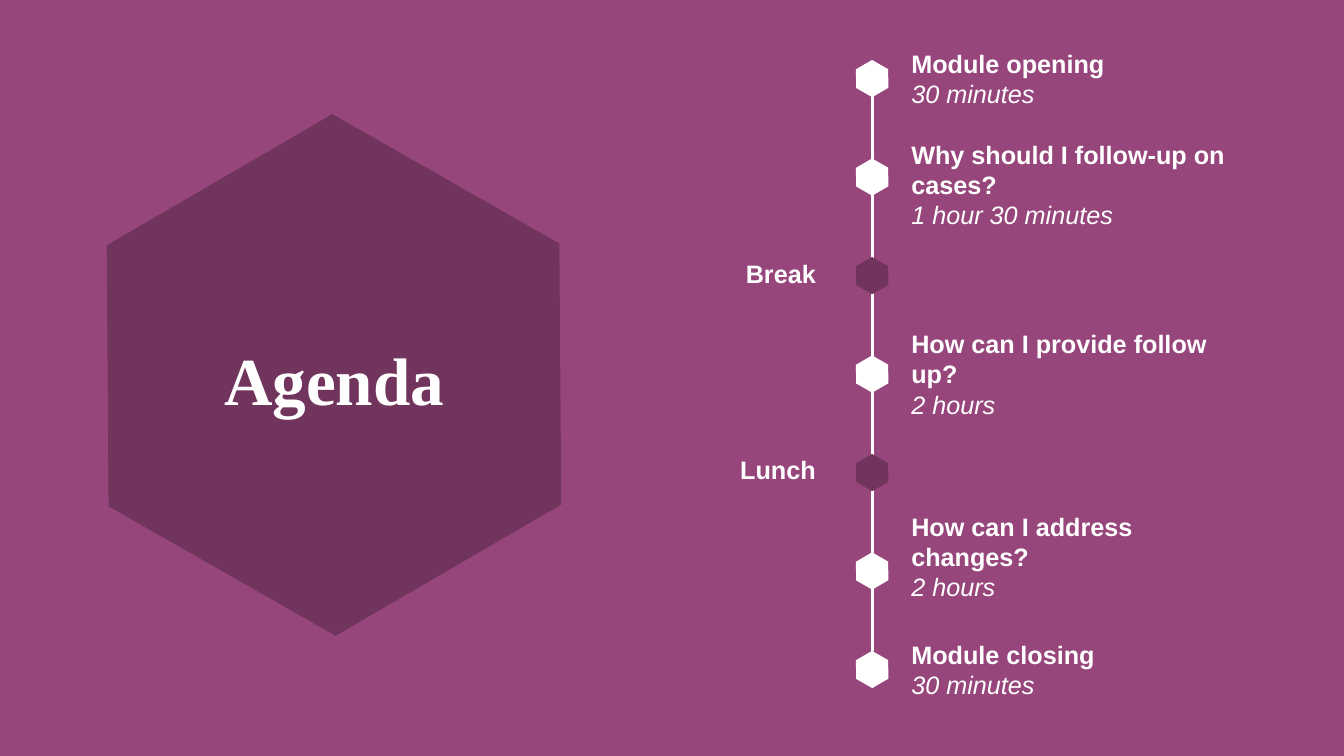
"""Build an agenda slide with a hexagon timeline."""
from dataclasses import dataclass

from lxml import etree
from pptx import Presentation, util as u
from pptx.dml.color import RGBColor
from pptx.enum import shapes, text
from pptx.oxml.ns import qn

TITLE = "Agenda"
SESSIONS = [
    {"row": 0, "top": 0.43, "height": 0.71, "lines": ["Module opening", "30 minutes"]},
    {"row": 1, "top": 1.33, "height": 1.01,
     "lines": ["Why should I follow-up on cases?", "1 hour 30 minutes"]},
    {"row": 3, "top": 3.21, "height": 1.01,
     "lines": ["How can I provide follow up?", "2 hours"]},
    {"row": 5, "top": 5.02, "height": 1.01,
     "lines": ["How can I address changes?", "2 hours"]},
    {"row": 6, "top": 6.29, "height": 0.71, "lines": ["Module closing", "30 minutes"]},
]
PAUSES = [
    {"row": 2, "top": 2.51, "height": 0.4, "lines": ["Break"]},
    {"row": 4, "top": 4.46, "height": 0.4, "lines": ["Lunch"]},
]


@dataclass(frozen=True)
class Theme:
    background: RGBColor = RGBColor.from_string("97467C")
    dark: RGBColor = RGBColor.from_string("71345D")
    light: RGBColor = RGBColor.from_string("FFFFFF")
    title_font: str = "Times New Roman"
    body_font: str = "Arial"
    title_size: int = 48
    body_size: int = 18
    line_width: float = 2.25


THEME = Theme()
WIDTH, HEIGHT = 13.33, 7.5
AXIS, FIRST_ROW, ROW_STEP = 8.65, 0.78, 0.977
SESSION_LEFT, SESSION_WIDTH = 8.94, 3.59
PAUSE_LEFT, PAUSE_WIDTH = 6.71, 1.48


def add_hexagon(slide, center_x, center_y, width, height, color):
    shape = slide.shapes.add_shape(
        shapes.MSO_SHAPE.HEXAGON, u.Inches(center_x - width / 2),
        u.Inches(center_y - height / 2), u.Inches(width), u.Inches(height))
    shape.adjustments[0] = 0.29
    shape.rotation = 29.7
    shape.shadow.inherit = False
    shape.fill.solid()
    shape.fill.fore_color.rgb = color
    shape.line.fill.background()


def add_text(slide, box, lines, alignment, font_name, size):
    shape = slide.shapes.add_textbox(*(u.Inches(length) for length in box))
    frame = shape.text_frame
    frame.word_wrap = True
    frame.text = "\n".join(lines)
    for index, paragraph in enumerate(frame.paragraphs):
        paragraph.alignment = alignment
        font = paragraph.font
        font.name, font.size = font_name, u.Pt(size)
        font.bold, font.italic = index == 0, index > 0
        font.color.rgb = THEME.light
    return frame


def add_axis(slide):
    last_row = max(entry["row"] for entry in SESSIONS)
    line = slide.shapes.add_connector(
        shapes.MSO_CONNECTOR.STRAIGHT, u.Inches(AXIS), u.Inches(0.72),
        u.Inches(AXIS), u.Inches(FIRST_ROW + last_row * ROW_STEP - 0.18))
    line.line.color.rgb = THEME.light
    line.line.width = u.Pt(THEME.line_width)
    etree.SubElement(line._element.spPr, qn("a:effectLst"))


def add_entries(slide, entries, left, width, alignment, marker_color):
    for entry in entries:
        add_hexagon(slide, AXIS, FIRST_ROW + entry["row"] * ROW_STEP,
                    0.37, 0.32, marker_color)
        frame = add_text(slide, (left, entry["top"], width, entry["height"]),
                         entry["lines"], alignment, THEME.body_font, THEME.body_size)
        frame.auto_size = text.MSO_AUTO_SIZE.SHAPE_TO_FIT_TEXT


def main():
    presentation = Presentation()
    presentation.slide_width = u.Inches(WIDTH)
    presentation.slide_height = u.Inches(HEIGHT)
    slide = presentation.slides.add_slide(presentation.slide_layouts[6])
    slide.background.fill.solid()
    slide.background.fill.fore_color.rgb = THEME.background

    add_hexagon(slide, WIDTH / 4 - 0.02, HEIGHT / 2 - 0.03, 5.19, 4.48, THEME.dark)
    title = add_text(slide, (1.12, 3.5, 4.39, 0.61), [TITLE], text.PP_ALIGN.CENTER,
                     THEME.title_font, THEME.title_size)
    title.vertical_anchor = text.MSO_ANCHOR.MIDDLE
    title.paragraphs[0].line_spacing = 0.9

    add_axis(slide)
    add_entries(slide, SESSIONS, SESSION_LEFT, SESSION_WIDTH,
                text.PP_ALIGN.LEFT, THEME.light)
    add_entries(slide, PAUSES, PAUSE_LEFT, PAUSE_WIDTH,
                text.PP_ALIGN.RIGHT, THEME.dark)
    presentation.save("out.pptx")


if __name__ == "__main__":
    main()
